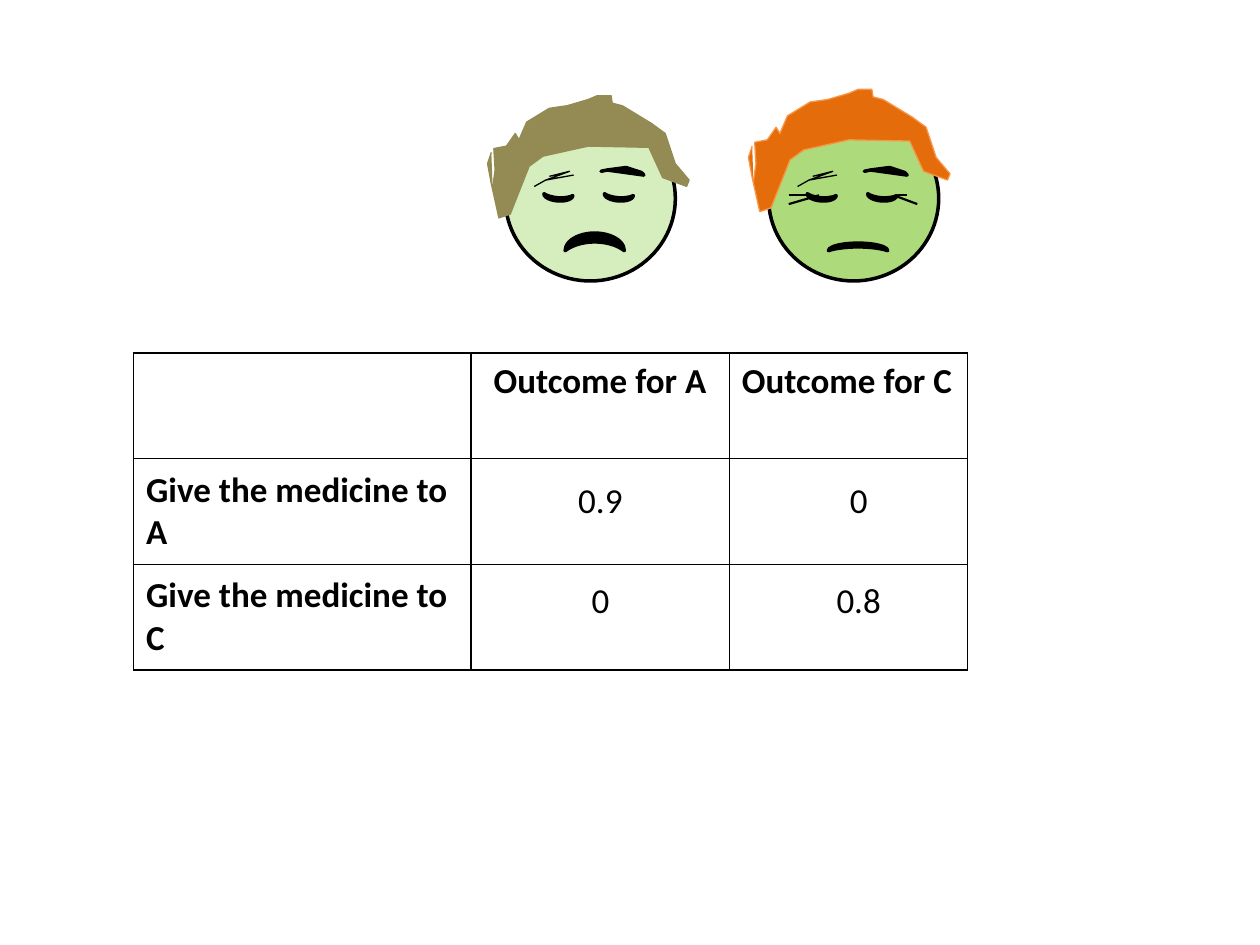
from dataclasses import dataclass
from itertools import accumulate

from lxml.etree import SubElement
from pptx import Presentation
from pptx.dml.color import RGBColor
from pptx.enum.shapes import MSO_CONNECTOR, MSO_SHAPE
from pptx.enum.text import MSO_ANCHOR, PP_ALIGN
from pptx.oxml.ns import qn
from pptx.util import Inches, Pt


@dataclass(frozen=True)
class Theme:
    font: str = "Calibri"
    text_size: int = 20
    ink: str = "000000"
    outline: float = 2
    strain: float = 1.25
    thin: float = 0.75
    border: float = 1


@dataclass(frozen=True)
class Patient:
    skin: str
    hair: str
    hair_edge: str
    hair_offset: tuple
    mouth_y: float
    mouth_thickness: float
    strained: bool


THEME = Theme()
PATIENT_A = Patient("D6EDBD", "948A54", "948A54", (-0.14, -0.19), 1.0, 0.14, False)
PATIENT_C = Patient("ADDB7B", "E46C0A", "F79646", (-0.16, -0.24), 1.04, 0.06, True)

# Outlines in hundredths of an inch
HAIR = [
    (3, 48), (0, 57), (3, 73), (9, 100), (18, 97), (33, 59), (44, 51), (80, 43),
    (128, 44), (139, 68), (158, 75), (160, 70), (149, 57), (141, 33), (130, 25),
    (107, 11), (99, 9), (98, 3), (87, 3), (80, 6), (63, 11), (49, 13), (31, 24),
    (25, 38), (22, 33), (15, 43), (5, 45), (6, 62), (4, 76),
]
LEFT_BROW = [(0, 13), (9, 8), (31, 4), (14, 7), (9, 8), (28, 1), (12, 5)]
RIGHT_BROW = [(2, 5), (7, 4), (36, 8), (34, 6), (22, 2), (7, 4)]
STRAIN_LINES = [
    (0.16, 0.70, 0.40, 0.63), (0.16, 0.63, 0.30, 0.63),
    (1.03, 0.63, 1.10, 0.63), (1.02, 0.64, 1.18, 0.70),
]


def paint(shape, fill, line, width):
    shape.shadow.inherit = False
    if fill:
        shape.fill.solid()
        shape.fill.fore_color.rgb = RGBColor.from_string(fill)
    else:
        shape.fill.background()
    shape.line.color.rgb = RGBColor.from_string(line)
    shape.line.width = Pt(width)


def add_outline(slide, left, top, outline, fill, line, width, close=False):
    start, *rest = [(Inches(left + x / 100), Inches(top + y / 100)) for x, y in outline]
    builder = slide.shapes.build_freeform(*start)
    builder.add_line_segments(rest, close=close)
    paint(builder.convert_to_shape(), fill, line, width)


def add_moon(slide, center_x, center_y, width, height, rotation):
    shape = slide.shapes.add_shape(
        MSO_SHAPE.MOON, Inches(center_x - width / 2), Inches(center_y - height / 2),
        Inches(width), Inches(height))
    shape.rotation = rotation
    paint(shape, THEME.ink, THEME.ink, THEME.outline)


def add_face(slide, left, top, width, height, patient):
    # Head
    head = slide.shapes.add_shape(
        MSO_SHAPE.OVAL, Inches(left), Inches(top), Inches(width), Inches(height))
    paint(head, patient.skin, THEME.ink, THEME.outline)
    # Eyes and strain lines
    for eye_x in (0.42, 0.9):
        add_moon(slide, left + eye_x, top + 0.65, 0.05, 0.23, 273.8)
    for x1, y1, x2, y2 in STRAIN_LINES if patient.strained else []:
        line = slide.shapes.add_connector(
            MSO_CONNECTOR.STRAIGHT, Inches(left + x1), Inches(top + y1),
            Inches(left + x2), Inches(top + y2))
        line.line.color.rgb = RGBColor.from_string(THEME.ink)
        line.line.width = Pt(THEME.strain)
        SubElement(line._element.spPr, qn("a:effectLst"))
    # Mouth
    add_moon(slide, left + 0.71, top + patient.mouth_y, patient.mouth_thickness, 0.47, 90)
    # Brows and hair
    add_outline(slide, left + 0.23, top + 0.43, LEFT_BROW, None, THEME.ink, THEME.thin)
    add_outline(slide, left + 0.74, top + 0.39, RIGHT_BROW, THEME.ink, THEME.ink,
                THEME.outline, close=True)
    hair_x, hair_y = patient.hair_offset
    add_outline(slide, left + hair_x, top + hair_y, HAIR, patient.hair,
                patient.hair_edge, THEME.thin)


def write(text_frame, text, bold=False, align=PP_ALIGN.LEFT):
    paragraph = text_frame.paragraphs[0]
    paragraph.text = text
    paragraph.alignment = align
    paragraph.font.name = THEME.font
    paragraph.font.size = Pt(THEME.text_size)
    paragraph.font.bold = bold
    paragraph.font.color.rgb = RGBColor.from_string(THEME.ink)


def add_borders(cell):
    properties = cell._tc.get_or_add_tcPr()
    for index, side in enumerate(("a:lnL", "a:lnR", "a:lnT", "a:lnB")):
        border = properties.makeelement(qn(side), {"w": str(Pt(THEME.border))})
        fill = SubElement(border, qn("a:solidFill"))
        SubElement(fill, qn("a:srgbClr"), val=THEME.ink)
        properties.insert(index, border)


def add_label(slide, left, top, text, bold=False, align=PP_ALIGN.LEFT):
    box = slide.shapes.add_textbox(Inches(left), Inches(top), Inches(2.05), Inches(0.44))
    box.text_frame.word_wrap = True
    write(box.text_frame, text, bold, align)


def add_outcomes(slide, left, top, columns, row_height):
    row_labels = ["", "Give the medicine to A", "Give the medicine to C"]
    # Grid with the choices in its first column
    table = slide.shapes.add_table(
        len(row_labels), len(columns), Inches(left), Inches(top),
        Inches(sum(columns)), Inches(row_height * len(row_labels))).table
    table.first_row = table.horz_banding = False
    for column, width in zip(table.columns, columns):
        column.width = Inches(width)
    for row, label in zip(table.rows, row_labels):
        row.height = Inches(row_height)
        for cell in row.cells:
            cell.fill.background()
            cell.vertical_anchor = MSO_ANCHOR.MIDDLE
            add_borders(cell)
        if label:
            write(row.cells[0].text_frame, label, bold=True)
    # Headings and values over the grid
    edge_a, edge_c = [left + edge for edge in accumulate(columns[:2])]
    add_label(slide, edge_a + 0.08, top, "Outcome for A", bold=True)
    add_label(slide, edge_c, top, "Outcome for C", bold=True)
    for offset, values in ((0.95, ("0.9", "0")), (1.74, ("0", "0.8"))):
        for edge, value in zip((edge_a, edge_c), values):
            add_label(slide, edge, top + offset, value, align=PP_ALIGN.CENTER)


def main():
    presentation = Presentation()
    presentation.slide_width, presentation.slide_height = Inches(10), Inches(7.5)
    slide = presentation.slides.add_slide(presentation.slide_layouts[6])
    add_face(slide, 4.01, 0.92, 1.35, 1.31, PATIENT_A)
    add_outcomes(slide, 1.06, 2.8, (2.68, 2.05, 1.89), 0.84)
    add_face(slide, 6.1, 0.92, 1.35, 1.31, PATIENT_C)
    presentation.save("out.pptx")


if __name__ == "__main__":
    main()
